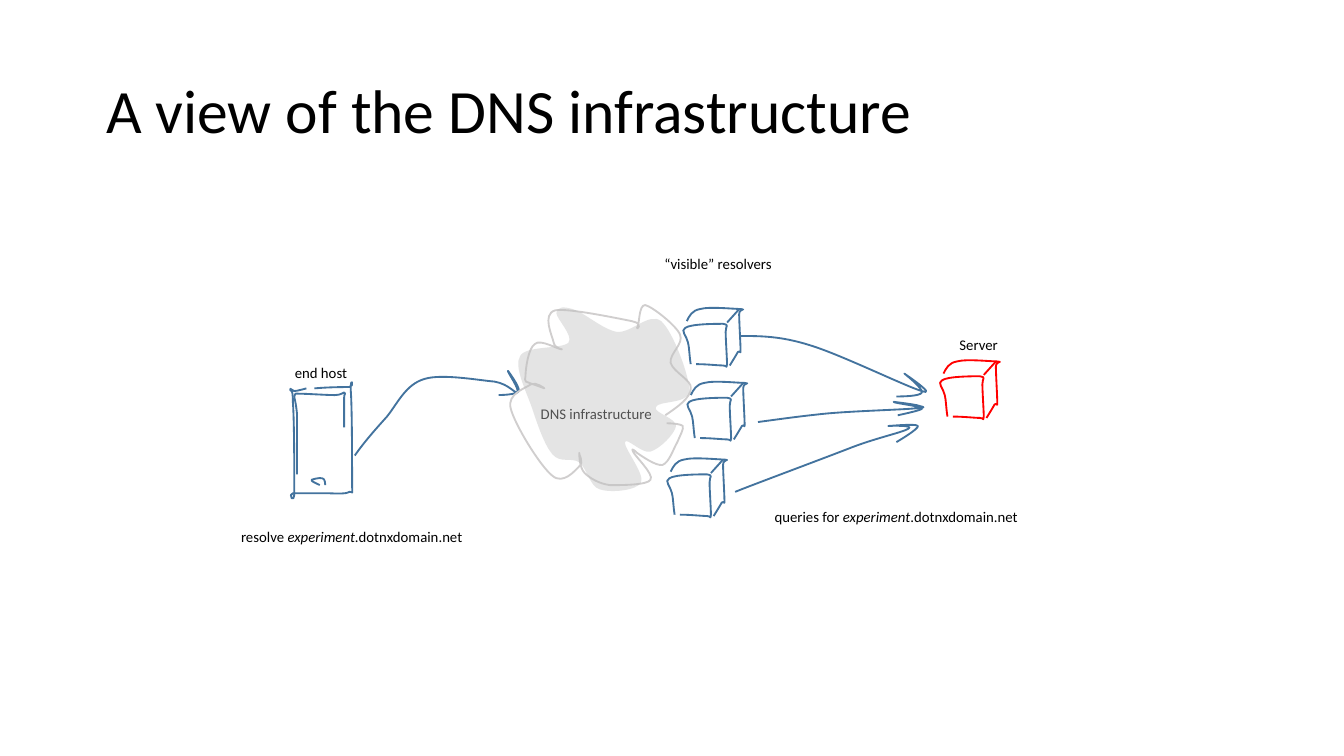
from pptx import Presentation
from pptx.dml.color import RGBColor
from pptx.enum.shapes import MSO_CONNECTOR as Connector
from pptx.enum.text import MSO_ANCHOR as Anchor, MSO_AUTO_SIZE as AutoSize, PP_ALIGN as Align
from pptx.oxml.ns import qn
from pptx.oxml.xmlchemy import OxmlElement
from pptx.util import Inches, Pt

BLACK = RGBColor(0x00, 0x00, 0x00)
BLUE = RGBColor(0x43, 0x73, 0x9E)
RED = RGBColor(0xFF, 0x00, 0x00)
LIGHT_GRAY = RGBColor(0xD0, 0xCE, 0xCE)
CLOUD_GRAY = RGBColor(0xBF, 0xBF, 0xBF)
FONT = "Calibri"

# Each curve is a list of x, y values: a start, then three points per Bezier segment.
PHONE = [
    [2.34, 2.89, 2.45, 2.88, 2.56, 2.88, 2.6, 2.88, 2.64, 2.88, 2.61, 2.78, 2.61, 2.9,
     2.62, 3.02, 2.62, 3.45, 2.62, 3.58, 2.62, 3.71, 2.63, 3.65, 2.6, 3.66,
     2.57, 3.68, 2.48, 3.67, 2.41, 3.67, 2.34, 3.67, 2.22, 3.67, 2.18, 3.67,
     2.14, 3.67, 2.19, 3.77, 2.19, 3.66, 2.19, 3.54, 2.19, 3.13, 2.18, 3,
     2.18, 2.87, 2.16, 2.92, 2.16, 2.9, 2.16, 2.88, 2.17, 2.91, 2.19, 2.91,
     2.21, 2.91, 2.28, 2.89, 2.28, 2.89],
    [2.38, 3.61, 2.34, 3.59, 2.31, 3.58, 2.32, 3.57, 2.32, 3.57, 2.38, 3.55, 2.4, 3.56,
     2.42, 3.56, 2.42, 3.61, 2.42, 3.61],
    [2.21, 3.53, 2.21, 3.35, 2.21, 3.18, 2.21, 3.08, 2.2, 2.98, 2.19, 2.97, 2.19, 2.95,
     2.2, 2.92, 2.19, 2.93, 2.24, 2.93, 2.29, 2.93, 2.43, 2.94, 2.49, 2.94,
     2.54, 2.94, 2.55, 2.92, 2.56, 2.92, 2.58, 2.93, 2.56, 2.92, 2.56, 2.96,
     2.56, 3.01, 2.56, 3.18, 2.56, 3.18],
]
HOST_ARROW = [
    2.64, 3.39, 2.71, 3.29, 2.79, 3.2, 2.88, 3.1, 2.96, 3, 3.02, 2.86, 3.16, 2.82,
    3.29, 2.78, 3.56, 2.83, 3.68, 2.84, 3.79, 2.86, 3.83, 2.93, 3.85, 2.92,
    3.87, 2.9, 3.77, 2.76, 3.78, 2.76, 3.78, 2.76, 3.87, 2.88, 3.86, 2.91,
    3.85, 2.94, 3.71, 2.94, 3.71, 2.94]
CLOUD_OUTLINE = [
    4.95, 3.09, 5.04, 3.03, 5.14, 2.96, 5.14, 2.89, 5.15, 2.83, 5.01, 2.77, 4.99, 2.7,
    4.98, 2.63, 5.09, 2.56, 5.06, 2.49, 5.03, 2.42, 4.85, 2.28, 4.8, 2.27,
    4.75, 2.27, 4.76, 2.42, 4.74, 2.44, 4.73, 2.46, 4.8, 2.41, 4.7, 2.39,
    4.6, 2.37, 4.22, 2.29, 4.13, 2.31, 4.03, 2.34, 4.11, 2.5, 4.12, 2.55,
    4.13, 2.6, 4.2, 2.6, 4.18, 2.6, 4.15, 2.6, 4.02, 2.52, 3.98, 2.56,
    3.93, 2.59, 3.91, 2.75, 3.91, 2.8, 3.9, 2.85, 3.92, 2.84, 3.94, 2.85,
    3.97, 2.86, 4.05, 2.89, 4.05, 2.89, 4.05, 2.89, 3.99, 2.84, 3.95, 2.86,
    3.91, 2.89, 3.77, 2.93, 3.8, 3.04, 3.83, 3.16, 4.02, 3.47, 4.11, 3.54,
    4.19, 3.61, 4.28, 3.5, 4.31, 3.47, 4.35, 3.44, 4.3, 3.37, 4.31, 3.37,
    4.31, 3.38, 4.31, 3.48, 4.35, 3.52, 4.39, 3.56, 4.46, 3.6, 4.54, 3.61,
    4.62, 3.61, 4.82, 3.61, 4.84, 3.57, 4.87, 3.53, 4.72, 3.39, 4.71, 3.36,
    4.69, 3.32, 4.74, 3.37, 4.74, 3.37, 4.77, 3.39, 4.88, 3.47, 4.93, 3.46,
    4.98, 3.44, 5.01, 3.34, 5.04, 3.29, 5.06, 3.24, 5.09, 3.19, 5.08, 3.17,
    5.06, 3.15, 4.96, 3.15, 4.96, 3.15]
CLOUD_FILL = [
    4.14, 2.33, 4.14, 2.37, 4.27, 2.5, 4.23, 2.55, 4.18, 2.6, 3.91, 2.57, 3.87, 2.65,
    3.82, 2.73, 3.92, 2.92, 3.96, 3.04, 4, 3.16, 4.05, 3.31, 4.11, 3.38,
    4.17, 3.45, 4.25, 3.4, 4.31, 3.44, 4.37, 3.49, 4.39, 3.62, 4.46, 3.64,
    4.54, 3.67, 4.74, 3.65, 4.77, 3.59, 4.8, 3.53, 4.64, 3.33, 4.65, 3.29,
    4.66, 3.25, 4.78, 3.38, 4.84, 3.36, 4.91, 3.34, 5.02, 3.23, 5.03, 3.17,
    5.03, 3.11, 4.86, 3.07, 4.88, 3.03, 4.89, 2.98, 5.12, 3.01, 5.13, 2.91,
    5.13, 2.8, 5.01, 2.47, 4.92, 2.39, 4.83, 2.32, 4.7, 2.48, 4.59, 2.47,
    4.48, 2.45, 4.34, 2.32, 4.26, 2.3, 4.19, 2.28, 4.15, 2.28, 4.14, 2.33]
# Cube parts are relative to the corner of the cube.
CUBE_FRONT = [
    0.06, 0.42, 0.05, 0.36, 0.05, 0.3, 0.04, 0.26, 0.03, 0.21, -0.02, 0.17, 0.02, 0.15,
    0.06, 0.12, 0.25, 0.12, 0.3, 0.12, 0.35, 0.13, 0.32, 0.13, 0.32, 0.18,
    0.32, 0.23, 0.33, 0.38, 0.33, 0.42, 0.32, 0.46, 0.34, 0.43, 0.3, 0.43,
    0.26, 0.43, 0.18, 0.42, 0.1, 0.42]
CUBE_BACK = [
    0.03, 0.1, 0.05, 0.06, 0.07, 0.02, 0.13, 0.01, 0.2, -0.01, 0.38, 0.01, 0.43, 0.01,
    0.48, 0.02, 0.42, 0, 0.42, 0.05, 0.42, 0.1, 0.43, 0.27, 0.43, 0.31,
    0.43, 0.36, 0.43, 0.31, 0.41, 0.33, 0.4, 0.35, 0.35, 0.43, 0.35, 0.43]
CUBES = [(5.08, 2.29, BLUE), (5.11, 2.84, BLUE), (4.96, 3.41, BLUE), (6.99, 2.68, RED)]
QUERY_ARROWS = [
    [5.51, 2.5, 5.66, 2.5, 5.81, 2.5, 6.03, 2.57, 6.26, 2.64, 6.75, 2.88, 6.86, 2.91,
     6.98, 2.95, 6.73, 2.78, 6.73, 2.78, 6.73, 2.78, 6.87, 2.89, 6.86, 2.92,
     6.85, 2.95, 6.7, 2.95, 6.67, 2.95],
    [5.64, 3.14, 5.79, 3.12, 5.93, 3.1, 6.12, 3.08, 6.31, 3.06, 6.67, 3.05, 6.79, 3.04,
     6.91, 3.03, 6.87, 3.03, 6.84, 3.02, 6.82, 3.01, 6.65, 2.99, 6.65, 2.99,
     6.65, 3, 6.85, 3.02, 6.86, 3.04, 6.86, 3.05, 6.77, 3.07, 6.68, 3.09],
    [5.47, 3.66, 5.49, 3.65, 5.5, 3.65, 5.52, 3.64, 5.78, 3.54, 6.05, 3.44, 6.31, 3.34,
     6.51, 3.26, 6.71, 3.22, 6.76, 3.19, 6.81, 3.16, 6.59, 3.17, 6.61, 3.17,
     6.62, 3.17, 6.82, 3.15, 6.83, 3.17, 6.84, 3.19, 6.67, 3.29, 6.67, 3.29],
]
# Left, top, width, then the runs; every second run is italic.
LABELS = [
    (1.67, 3.88, 1.88, [" resolve ", "experiment", ".dotnxdomain.net"]),
    (5.64, 3.73, 2.04, [" queries for ", "experiment", ".dotnxdomain.net"]),
    (2.07, 2.66, 0.62, [" end host"]),
    (3.9, 2.96, 1.06, [" DNS infrastructure"]),
    (7.04, 2.45, 0.49, ["Server"]),
    (4.82, 1.85, 1.03, [" “visible” resolvers"]),
]


def add_text(paragraph, text, size=7.9, italic=False):
    run = paragraph.add_run()
    run.text = text
    run.font.name = FONT
    run.font.size = Pt(size)
    run.font.italic = italic
    run.font.color.rgb = BLACK


def add_title(slide, text):
    title = slide.shapes.title
    title.left, title.top, title.width, title.height = map(Inches, (0.69, 0.3, 8.62, 1.09))
    frame = title.text_frame
    frame.auto_size = AutoSize.NONE
    frame.vertical_anchor = Anchor.MIDDLE
    paragraph = frame.paragraphs[0]
    paragraph.alignment = Align.LEFT
    paragraph.line_spacing = 0.9
    add_text(paragraph, text, size=33)


def add_label(slide, left, top, width, runs):
    box = slide.shapes.add_textbox(*map(Inches, (left, top, width, 0.23)))
    frame = box.text_frame
    frame.word_wrap = False
    frame.auto_size = AutoSize.SHAPE_TO_FIT_TEXT
    for index, text in enumerate(runs):
        add_text(frame.paragraphs[0], text, italic=index % 2 == 1)


def add_curve(slide, values, left=0, top=0, line=None, fill=None, alpha=100):
    points = [(Inches(left + x), Inches(top + y)) for x, y in zip(values[::2], values[1::2])]
    builder = slide.shapes.build_freeform(*points[0])
    builder.add_line_segments(points[1:], close=fill is not None)
    shape = builder.convert_to_shape()
    shape.shadow.inherit = False

    # Join every three straight segments into one cubic Bezier
    segments = list(shape._element.iter(qn("a:lnTo")))
    for start in range(0, len(segments), 3):
        curve = OxmlElement("a:cubicBezTo")
        segments[start].addprevious(curve)
        for segment in segments[start:start + 3]:
            curve.append(segment[0])
            segment.getparent().remove(segment)

    if line is None:
        shape.line.fill.background()
    else:
        shape.line.color.rgb = line
        shape.line.width = Pt(1)
    if fill is None:
        shape.fill.background()
    else:
        shape.fill.solid()
        shape.fill.fore_color.rgb = fill
        color = next(shape._element.spPr.iter(qn("a:srgbClr")))
        opacity = OxmlElement("a:alpha")
        opacity.set("val", str(alpha * 1000))
        color.append(opacity)


def add_line(slide, start, end, color):
    connector = slide.shapes.add_connector(Connector.STRAIGHT, *map(Inches, start + end))
    connector.line.color.rgb = color
    connector.line.width = Pt(1)
    connector._element.spPr.append(OxmlElement("a:effectLst"))


def add_cube(slide, left, top, color):
    for part in (CUBE_FRONT, CUBE_BACK):
        add_curve(slide, part, left, top, line=color)
    add_line(slide, (left + 0.33, top + 0.11), (left + 0.42, top + 0.01), color)


def main():
    presentation = Presentation()
    presentation.slide_width = Inches(10)
    presentation.slide_height = Inches(10 * 9 / 16)
    slide = presentation.slides.add_slide(presentation.slide_layouts[5])
    add_title(slide, "A view of the DNS infrastructure")

    # End host, its arrow and the cloud outline
    for curve in PHONE + [HOST_ARROW]:
        add_curve(slide, curve, line=BLUE)
    add_curve(slide, CLOUD_OUTLINE, line=LIGHT_GRAY)

    # Resolvers and server, with the queries between them
    for left, top, color in CUBES:
        add_cube(slide, left, top, color)
    for arrow in QUERY_ARROWS:
        add_curve(slide, arrow, line=BLUE)

    # Labels, then the translucent cloud over them
    for label in LABELS:
        add_label(slide, *label)
    add_curve(slide, CLOUD_FILL, fill=CLOUD_GRAY, alpha=42)
    presentation.save("out.pptx")


if __name__ == "__main__":
    main()
